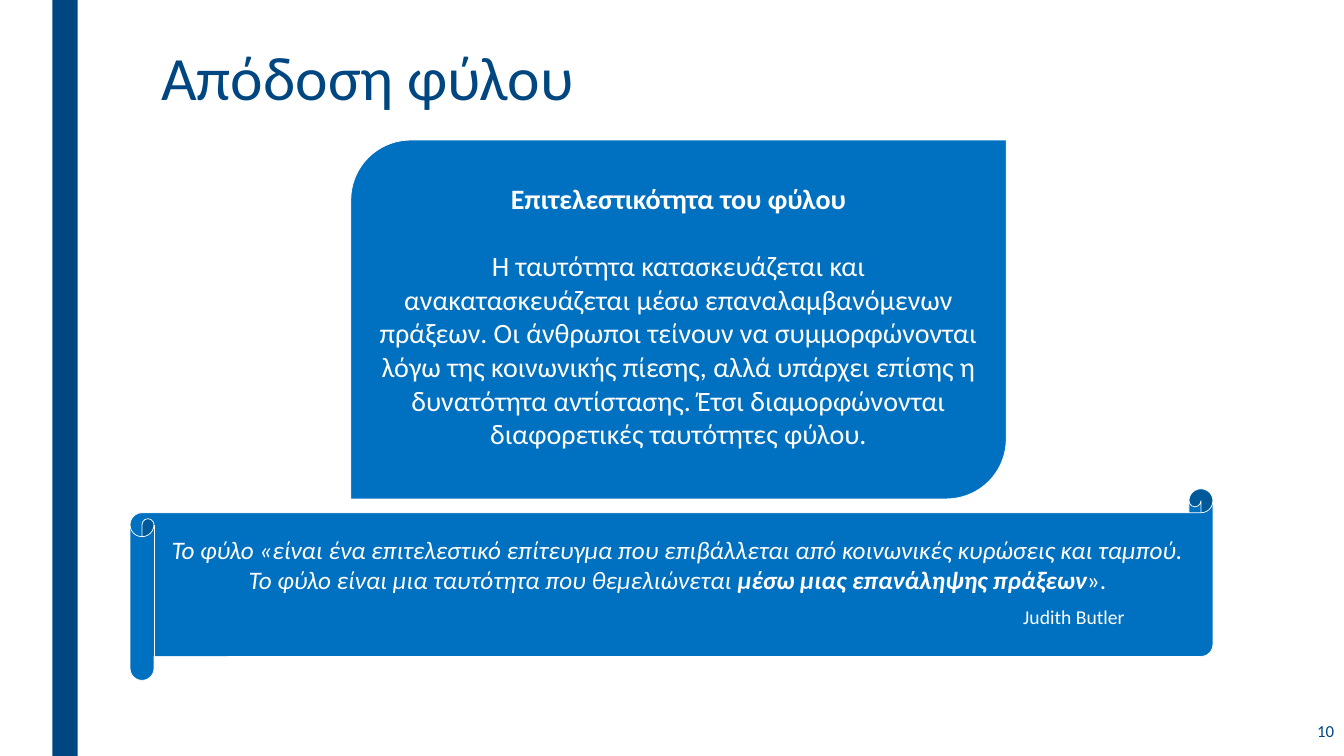
from pptx import Presentation
from pptx.dml.color import RGBColor
from pptx.enum.shapes import MSO_SHAPE
from pptx.enum.text import MSO_ANCHOR, PP_ALIGN
from pptx.util import Inches, Pt

NAVY = RGBColor(0x00, 0x46, 0x80)
BLUE = RGBColor(0x00, 0x70, 0xC0)
WHITE = RGBColor(0xFF, 0xFF, 0xFF)

# Content: each paragraph is a list of (text, font extras)
TITLE = [[("Απόδοση φύλου", {})]]
CONCEPT = [
    [("Επιτελεστικότητα του φύλου", {"bold": True})],
    [("Η ταυτότητα κατασκευάζεται και ανακατασκευάζεται μέσω επαναλαμβανόμενων "
      "πράξεων. Οι άνθρωποι τείνουν να συμμορφώνονται λόγω της κοινωνικής πίεσης, "
      "αλλά υπάρχει επίσης η δυνατότητα αντίστασης. Έτσι διαμορφώνονται "
      "διαφορετικές ταυτότητες φύλου.", {})],
]
QUOTE = [[
    ("Το φύλο «είναι ένα επιτελεστικό επίτευγμα που επιβάλλεται από κοινωνικές "
     "κυρώσεις και ταμπού. Το φύλο είναι μια ταυτότητα που θεμελιώνεται ",
     {"italic": True}),
    ("μέσω μιας επανάληψης πράξεων", {"italic": True, "bold": True}),
    ("».", {}),
]]
AUTHOR = [[("Judith Butler", {})]]
PAGE = [[("10", {})]]

prs = Presentation()
prs.slide_width, prs.slide_height = Inches(13.33), Inches(7.5)
slide = prs.slides.add_slide(prs.slide_layouts[5])


def inches(*lengths):
    return [Inches(length) for length in lengths]


def write(part, paragraphs, size, color, align, anchor, gap=0, bottom=0.05):
    frame = part.text_frame
    frame.word_wrap = True
    frame.vertical_anchor = anchor
    frame.margin_bottom = Inches(bottom)
    for index, runs in enumerate(paragraphs):
        paragraph = frame.add_paragraph() if index else frame.paragraphs[0]
        paragraph.alignment = align
        if index:
            paragraph.space_before = Pt(gap)
        for text, extras in runs:
            run = paragraph.add_run()
            run.text = text
            run.font.color.rgb = color
            for key, value in {"name": "Calibri", "size": Pt(size), **extras}.items():
                setattr(run.font, key, value)


def add_panel(preset, box, fill, outline=None):
    panel = slide.shapes.add_shape(preset, *inches(*box))
    panel.shadow.inherit = False
    panel.fill.solid()
    panel.fill.fore_color.rgb = fill
    if outline is None:
        panel.line.fill.background()
    else:
        panel.line.color.rgb = outline
        panel.line.width = Pt(0.5)
    return panel


# Side stripe
add_panel(MSO_SHAPE.RECTANGLE, (0.52, 0, 0.25, 7.5), NAVY)

# Title
title = slide.shapes.title
title.left, title.top, title.width, title.height = inches(1.5, 0.43, 10.5, 1.62)
write(title, TITLE, 44, NAVY, PP_ALIGN.LEFT, MSO_ANCHOR.TOP)
title.text_frame.paragraphs[0].line_spacing = 0.89

# Page number
page = slide.shapes.add_textbox(*inches(11.58, 7.03, 1.75, 0.44))
write(page, PAGE, 12, NAVY, PP_ALIGN.RIGHT, MSO_ANCHOR.MIDDLE)

# Concept panel
concept = add_panel(MSO_SHAPE.ROUND_2_DIAG_RECTANGLE, (3.48, 1.39, 6.5, 3.56), BLUE, WHITE)
write(concept, CONCEPT, 20, WHITE, PP_ALIGN.CENTER, MSO_ANCHOR.MIDDLE, gap=24, bottom=0.12)

# Quote scroll and its author
quote = add_panel(MSO_SHAPE.HORIZONTAL_SCROLL, (1.29, 4.85, 10.74, 1.9), BLUE, WHITE)
write(quote, QUOTE, 18, WHITE, PP_ALIGN.CENTER, MSO_ANCHOR.MIDDLE, bottom=0.45)
author = slide.shapes.add_textbox(*inches(10.05, 5.95, 1.95, 0.34))
write(author, AUTHOR, 14, WHITE, PP_ALIGN.LEFT, MSO_ANCHOR.TOP)

prs.save("out.pptx")
